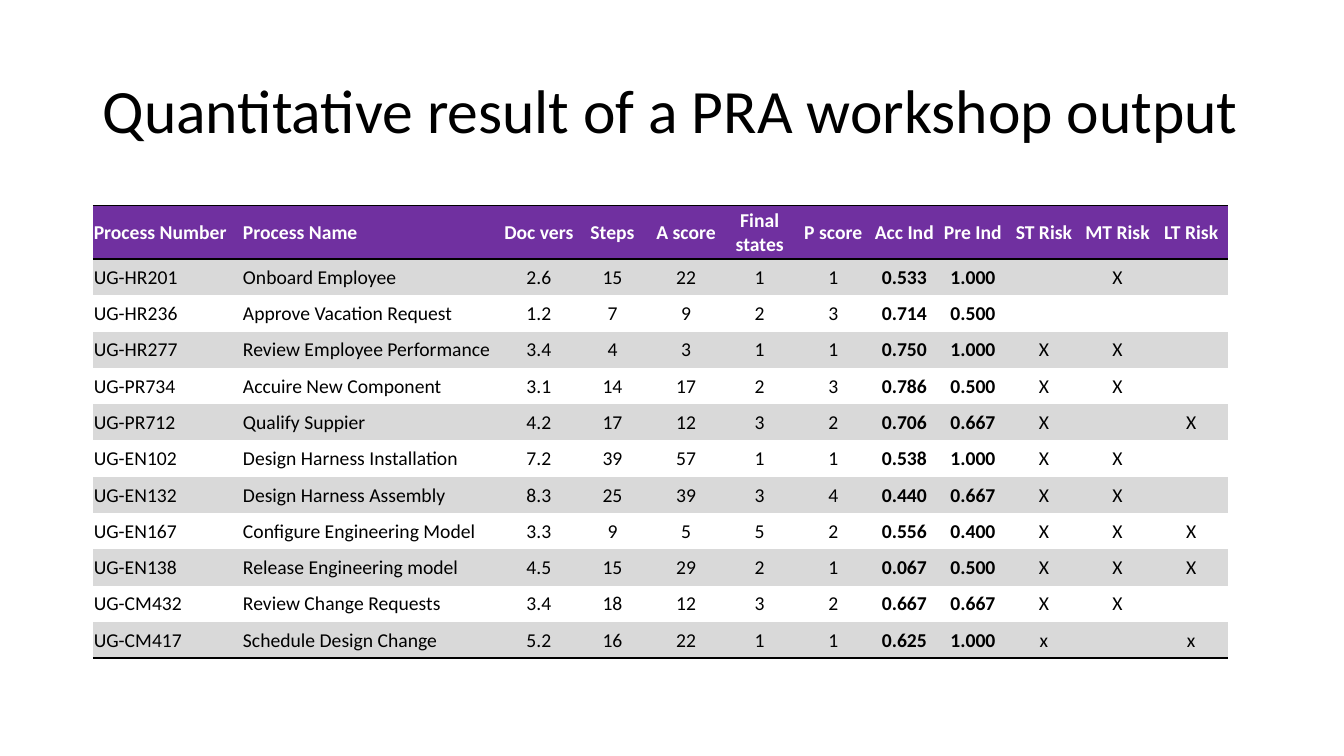
from dataclasses import dataclass
from lxml.etree import SubElement as Sub
from pptx import Presentation as Deck
from pptx.dml.color import RGBColor as Color
from pptx.enum.text import MSO_ANCHOR as Anchor, PP_ALIGN as Align
from pptx.oxml.ns import qn
from pptx.util import Inches, Pt


@dataclass(frozen=True)
class Theme:
    font: str = "Calibri"
    ink: str = "000000"
    light: str = "FFFFFF"
    head: str = "7030A0"
    band: str = "D9D9D9"
    title: int = 44
    body: int = 14
    rule: int = 1


THEME = Theme()
WIDTHS = [1.48, 2.58] + [0.73] * 5 + [0.68] * 2 + [0.73] * 3
HEAD = ["Process Number", "Process Name", "Doc vers", "Steps", "A score",
        "Final states", "P score", "Acc Ind", "Pre Ind", "ST Risk",
        "MT Risk", "LT Risk"]
ROWS = [
    ["UG-HR201", "Onboard Employee", "2.6", "15", "22", "1", "1", "0.533", "1.000", "", "X", ""],
    ["UG-HR236", "Approve Vacation Request", "1.2", "7", "9", "2", "3", "0.714", "0.500", "", "", ""],
    ["UG-HR277", "Review Employee Performance", "3.4", "4", "3", "1", "1", "0.750", "1.000", "X", "X", ""],
    ["UG-PR734", "Accuire New Component", "3.1", "14", "17", "2", "3", "0.786", "0.500", "X", "X", ""],
    ["UG-PR712", "Qualify Suppier", "4.2", "17", "12", "3", "2", "0.706", "0.667", "X", "", "X"],
    ["UG-EN102", "Design Harness Installation", "7.2", "39", "57", "1", "1", "0.538", "1.000", "X", "X", ""],
    ["UG-EN132", "Design Harness Assembly", "8.3", "25", "39", "3", "4", "0.440", "0.667", "X", "X", ""],
    ["UG-EN167", "Configure Engineering Model", "3.3", "9", "5", "5", "2", "0.556", "0.400", "X", "X", "X"],
    ["UG-EN138", "Release Engineering model", "4.5", "15", "29", "2", "1", "0.067", "0.500", "X", "X", "X"],
    ["UG-CM432", "Review Change Requests", "3.4", "18", "12", "3", "2", "0.667", "0.667", "X", "X", ""],
    ["UG-CM417", "Schedule Design Change", "5.2", "16", "22", "1", "1", "0.625", "1.000", "x", "", "x"],
]


def apply(item, **vals):
    for key, val in vals.items():
        setattr(item, key, val)


def write(para, text, size, color, bold=False):
    run = para.add_run()
    run.text = text
    apply(run.font, name=THEME.font, size=Pt(size), bold=bold)
    run.font.color.rgb = Color.from_string(color)


def add_title(slide, text):
    box = slide.shapes.add_textbox(Inches(0.92), Inches(0.4), Inches(11.5), Inches(1.45))
    frame = box.text_frame
    apply(frame, word_wrap=True, vertical_anchor=Anchor.MIDDLE)
    para = frame.paragraphs[0]
    para.line_spacing = 0.9
    write(para, text, THEME.title, THEME.ink)


def add_edges(cell, ruled):
    props = cell._tc.get_or_add_tcPr()
    for side in "LRTB":
        line = Sub(props, qn(f"a:ln{side}"))
        if side in ruled:
            line.set("w", str(Pt(THEME.rule)))
            fill = Sub(line, qn("a:solidFill"))
            Sub(fill, qn("a:srgbClr")).set("val", THEME.ink)
        else:
            Sub(line, qn("a:noFill"))


def paint(cell, color):
    if color:
        cell.fill.solid()
        cell.fill.fore_color.rgb = Color.from_string(color)
    else:
        cell.fill.background()


def fill_cell(cell, text, row, col):
    edge = Inches(0.01)
    apply(cell, margin_left=edge, margin_right=edge, margin_top=edge,
          margin_bottom=0, vertical_anchor=Anchor.MIDDLE)
    add_edges(cell, {0: "TB", 1: "T", len(ROWS): "B"}.get(row, ""))
    top = row == 0
    paint(cell, THEME.head if top else THEME.band if row % 2 else None)
    if text:
        para = cell.text_frame.paragraphs[0]
        para.alignment = Align.LEFT if col < 2 else Align.CENTER
        bold = top or HEAD[col].endswith("Ind")
        write(para, text, THEME.body, THEME.light if top else THEME.ink, bold)


def add_grid(slide):
    data = [HEAD] + ROWS
    grid = slide.shapes.add_table(len(data), len(HEAD), Inches(0.92), Inches(2.04),
                                  Inches(sum(WIDTHS)), Inches(4.49)).table
    apply(grid, first_row=False, horz_banding=False)
    for col, width in zip(grid.columns, WIDTHS):
        col.width = Inches(width)
    for row, texts in enumerate(data):
        grid.rows[row].height = Inches(0.36 if row else 0.53)
        for col, text in enumerate(texts):
            fill_cell(grid.cell(row, col), text, row, col)


def main():
    deck = Deck()
    apply(deck, slide_width=Inches(13.33), slide_height=Inches(7.5))
    slide = deck.slides.add_slide(deck.slide_layouts[6])
    add_title(slide, "Quantitative result of a PRA workshop output")
    add_grid(slide)
    deck.save("out.pptx")


if __name__ == "__main__":
    main()
